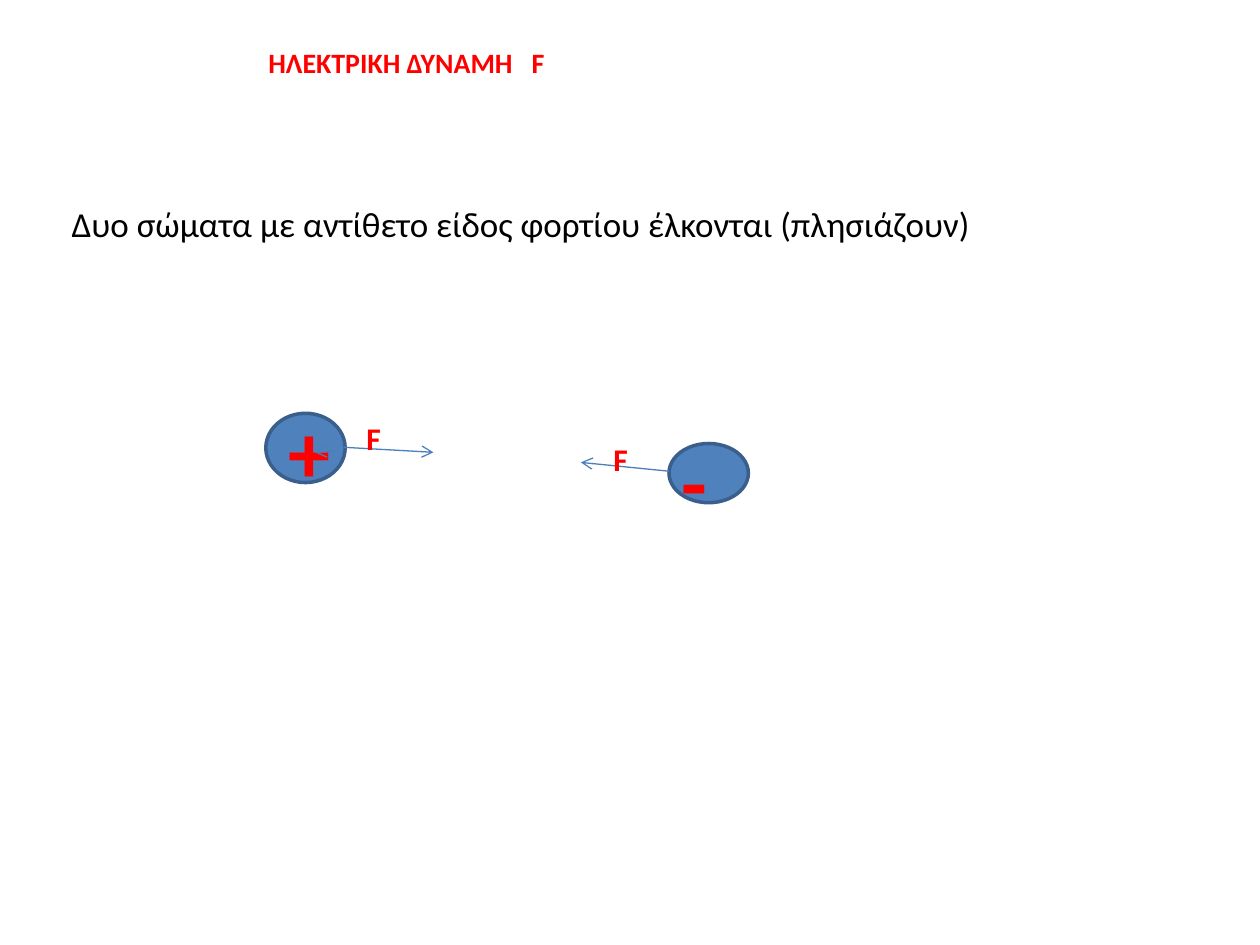
import dataclasses

import lxml.etree
import pptx
import pptx.dml.color
import pptx.enum.shapes
import pptx.enum.text
import pptx.oxml.ns
import pptx.util

Inches = pptx.util.Inches
Color = pptx.dml.color.RGBColor


@dataclasses.dataclass(frozen=True)
class Theme:
    font: str = "Calibri"
    red: str = "FF0000"
    black: str = "000000"
    fill: str = "4F81BD"
    edge: str = "3A5F8C"
    arrow: str = "4B7EBC"
    title: int = 16
    body: int = 20
    sign: int = 48
    force: int = 18


@dataclasses.dataclass(frozen=True)
class Box:
    left: float
    top: float
    width: float
    height: float

    def lengths(self) -> tuple:
        return tuple(Inches(n) for n in dataclasses.astuple(self))


@dataclasses.dataclass(frozen=True)
class Charge:
    body: Box
    sign: str
    place: Box


@dataclasses.dataclass(frozen=True)
class Arrow:
    start: tuple[float, float]
    end: tuple[float, float]


THEME = Theme()

CHARGES = [
    Charge(Box(2.11, 3.28, 0.63, 0.55), "+", Box(2.19, 3.12, 0.47, 0.91)),
    Charge(Box(5.31, 3.52, 0.63, 0.47), "-", Box(5.31, 3.36, 0.47, 0.91)),
]
ARROWS = [
    Arrow((2.66, 3.58), (2.5, 3.59)),
    Arrow((2.73, 3.55), (3.44, 3.59)),
    Arrow((5.31, 3.74), (4.61, 3.67)),
]
FORCES = [Box(4.77, 3.44, 0.47, 0.4), Box(2.81, 3.28, 0.47, 0.4)]


def style(frame, size: int, color: str, bold: bool) -> None:
    frame.word_wrap = True
    frame.vertical_anchor = pptx.enum.text.MSO_ANCHOR.TOP
    for line in frame.paragraphs:
        line.alignment = pptx.enum.text.PP_ALIGN.LEFT
        for run in line.runs:
            run.font.name = THEME.font
            run.font.size = pptx.util.Pt(size)
            run.font.bold = bold
            run.font.color.rgb = Color.from_string(color)


def add_title(slide) -> None:
    title = slide.shapes.title
    title.left, title.top, title.width, title.height = Box(2.03, 0.31, 6.56, 0.37).lengths()
    frame = title.text_frame
    frame.text = "ΗΛΕΚΤΡΙΚΗ ΔΥΝΑΜΗ"
    # Letter spacing widens the gap before the symbol
    symbol = frame.paragraphs[0].add_run()
    symbol.text = " F"
    symbol.font._element.set("spc", "720")
    frame.auto_size = pptx.enum.text.MSO_AUTO_SIZE.NONE
    style(frame, THEME.title, THEME.red, True)


def add_text(slide, box: Box, text: str, size: int, color: str, bold: bool) -> None:
    frame = slide.shapes.add_textbox(*box.lengths()).text_frame
    frame.text = text
    style(frame, size, color, bold)


def add_charge(slide, charge: Charge) -> None:
    oval = slide.shapes.add_shape(pptx.enum.shapes.MSO_SHAPE.OVAL, *charge.body.lengths())
    oval.shadow.inherit = False
    oval.fill.solid()
    oval.fill.fore_color.rgb = Color.from_string(THEME.fill)
    oval.line.color.rgb = Color.from_string(THEME.edge)
    oval.line.width = pptx.util.Pt(2)
    add_text(slide, charge.place, charge.sign, THEME.sign, THEME.red, True)


def add_arrow(slide, arrow: Arrow) -> None:
    ends = [Inches(n) for n in arrow.start + arrow.end]
    line = slide.shapes.add_connector(pptx.enum.shapes.MSO_CONNECTOR.STRAIGHT, *ends)
    line.line.color.rgb = Color.from_string(THEME.arrow)
    line.line.width = pptx.util.Pt(0.75)
    # Arrowhead, and no shadow
    name = pptx.oxml.ns.qn
    lxml.etree.SubElement(line.line._get_or_add_ln(), name("a:tailEnd"), type="arrow")
    lxml.etree.SubElement(line._element.spPr, name("a:effectLst"))


def main() -> None:
    deck = pptx.Presentation()
    deck.slide_width, deck.slide_height = Inches(10), Inches(7.5)
    slide = deck.slides.add_slide(deck.slide_layouts[5])

    # Heading
    add_title(slide)

    # Charged bodies and the forces between them
    for charge in CHARGES:
        add_charge(slide, charge)
    for arrow in ARROWS:
        add_arrow(slide, arrow)
    for box in FORCES:
        add_text(slide, box, "F", THEME.force, THEME.red, True)

    # Rule of attraction
    add_text(slide, Box(0.47, 1.56, 8.52, 0.44),
             "Δυο σώματα με αντίθετο είδος φορτίου έλκονται (πλησιάζουν)",
             THEME.body, THEME.black, False)

    deck.save("out.pptx")


if __name__ == "__main__":
    main()
